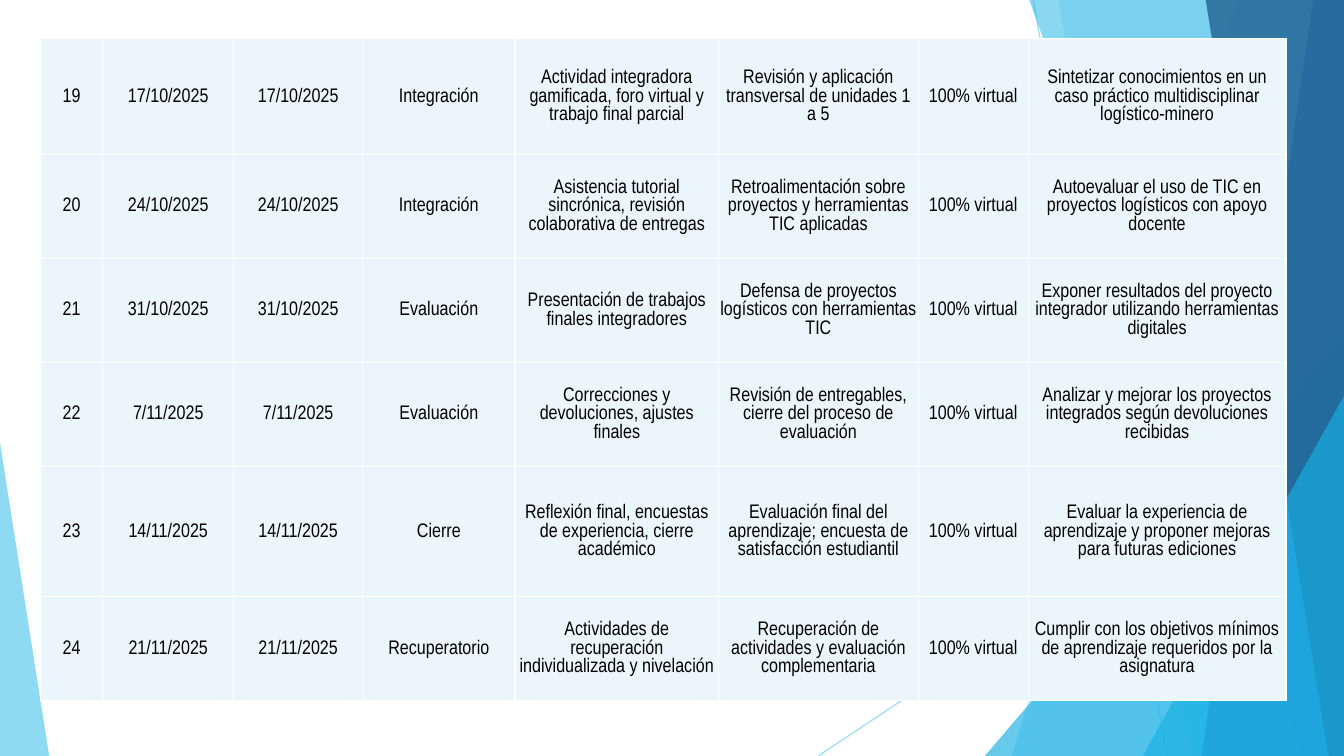
from lxml import etree
from pptx import Presentation
from pptx.dml.color import RGBColor
from pptx.enum.shapes import MSO_CONNECTOR, MSO_SHAPE
from pptx.enum.text import MSO_ANCHOR, PP_ALIGN
from pptx.oxml.ns import qn
from pptx.util import Cm, Pt

LINE = MSO_CONNECTOR.STRAIGHT
TRIANGLE = MSO_SHAPE.ISOSCELES_TRIANGLE
CENTER = PP_ALIGN.CENTER
MIDDLE = MSO_ANCHOR.MIDDLE

WIDTH, HEIGHT = 33.87, 19.05
COLORS = {
    "sky": "5FCBEF",
    "cyan": "17B0E4",
    "blue": "2E83C3",
    "navy": "226292",
    "cell": "EAF6FC",
    "white": "FFFFFF",
    "black": "000000",
}
LINES = [(26.04, 0, 29.41, HEIGHT), (WIDTH, 10.24, 20.62, HEIGHT)]
BACK = [(31.19, 25.5, "sky", 36), (26.67, 30.05, "sky", 20)]
FRONT = [
    (25.93, 32.79, "cyan", 50),
    (33.1, 30.28, "blue", 70),
    (30.38, 33.48, "navy", 80),
]
COLS = [1.57, 3.3, 3.25, 3.84, 5.13, 5.03, 2.77, 6.5]
ROWS = [2.92, 2.62, 2.62, 2.62, 3.28, 2.62]
FIRST = 19
MODE = "100% virtual"
WEEKS = [
    ("17/10/2025", "Integración",
     "Actividad integradora gamificada, foro virtual y trabajo final parcial",
     "Revisión y aplicación transversal de unidades 1 a 5",
     "Sintetizar conocimientos en un caso práctico multidisciplinar logístico-minero"),
    ("24/10/2025", "Integración",
     "Asistencia tutorial sincrónica, revisión colaborativa de entregas",
     "Retroalimentación sobre proyectos y herramientas TIC aplicadas",
     "Autoevaluar el uso de TIC en proyectos logísticos con apoyo docente"),
    ("31/10/2025", "Evaluación",
     "Presentación de trabajos finales integradores",
     "Defensa de proyectos logísticos con herramientas TIC",
     "Exponer resultados del proyecto integrador utilizando herramientas digitales"),
    ("7/11/2025", "Evaluación",
     "Correcciones y devoluciones, ajustes finales",
     "Revisión de entregables, cierre del proceso de evaluación",
     "Analizar y mejorar los proyectos integrados según devoluciones recibidas"),
    ("14/11/2025", "Cierre",
     "Reflexión final, encuestas de experiencia, cierre académico",
     "Evaluación final del aprendizaje; encuesta de satisfacción estudiantil",
     "Evaluar la experiencia de aprendizaje y proponer mejoras para futuras ediciones"),
    ("21/11/2025", "Recuperatorio",
     "Actividades de recuperación individualizada y nivelación",
     "Recuperación de actividades y evaluación complementaria",
     "Cumplir con los objetivos mínimos de aprendizaje requeridos por la asignatura"),
]


def paint(fill, color, alpha=100):
    """Fill with a solid colour at the given opacity in percent."""
    fill.solid()
    fill.fore_color.rgb = RGBColor.from_string(COLORS[color])
    if alpha < 100:
        solid = fill._xPr.find(qn("a:solidFill"))
        etree.SubElement(solid[0], qn("a:alpha"), val=str(alpha * 1000))


def finish(shape, color, alpha):
    """Give a shape its fill and remove its outline and shadow."""
    shape.shadow.inherit = False
    shape.line.fill.background()
    paint(shape.fill, color, alpha)


def add_line(slide, x1, y1, x2, y2):
    """Draw a thin pale line."""
    line = slide.shapes.add_connector(LINE, Cm(x1), Cm(y1), Cm(x2), Cm(y2))
    line.line.width = Pt(0.75)
    paint(line.line.fill, "sky", 70)
    etree.SubElement(line._element.spPr, qn("a:effectLst"))


def add_wedge(slide, top, base, color, alpha):
    """Draw a band from a slanted left edge to the right side of the slide."""
    pen = slide.shapes.build_freeform(Cm(top), Cm(-0.03))
    points = [(WIDTH, -0.03), (WIDTH, HEIGHT), (base, HEIGHT)]
    pen.add_line_segments([(Cm(x), Cm(y)) for x, y in points], close=True)
    finish(pen.convert_to_shape(), color, alpha)


def add_peak(slide, left, top, width, tip, color, alpha):
    """Draw a right triangle standing on the bottom of the slide."""
    peak = slide.shapes.add_shape(
        TRIANGLE, Cm(left), Cm(top), Cm(width), Cm(HEIGHT - top))
    peak.adjustments[0] = tip
    finish(peak, color, alpha)


def write(frame, text, *, size=14, font="Arial Narrow", color="black", align=CENTER):
    """Write formatted text into a text frame."""
    para = frame.paragraphs[0]
    para.alignment = align
    run = para.add_run()
    run.text = text
    run.font.size = Pt(size)
    run.font.name = font
    run.font.color.rgb = RGBColor.from_string(COLORS[color])


def add_edges(cell):
    """Put a white border on each side of a cell."""
    props = cell._tc.get_or_add_tcPr()
    for side in ("lnL", "lnR", "lnT", "lnB"):
        edge = etree.SubElement(props, qn("a:" + side), w=str(Pt(1)))
        solid = etree.SubElement(edge, qn("a:solidFill"))
        etree.SubElement(solid, qn("a:srgbClr"), val=COLORS["white"])


def fill_cell(cell, text):
    """Format a cell and write its text."""
    cell.margin_left = cell.margin_right = cell.margin_top = Cm(0.03)
    cell.margin_bottom = 0
    cell.vertical_anchor = MIDDLE
    add_edges(cell)
    paint(cell.fill, "cell")
    write(cell.text_frame, text)


def add_plan(slide):
    """Add the table of weekly classes."""
    table = slide.shapes.add_table(
        len(ROWS), len(COLS), Cm(1.02), Cm(0.97), Cm(sum(COLS)), Cm(sum(ROWS))).table
    for col, width in zip(table.columns, COLS):
        col.width = Cm(width)
    for row, height in zip(table.rows, ROWS):
        row.height = Cm(height)
    for i, (date, stage, task, topic, goal) in enumerate(WEEKS):
        texts = [str(FIRST + i), date, date, stage, task, topic, MODE, goal]
        for j, text in enumerate(texts):
            fill_cell(table.cell(i, j), text)


def main():
    """Build the slide and save it."""
    deck = Presentation()
    deck.slide_width, deck.slide_height = Cm(WIDTH), Cm(HEIGHT)
    slide = deck.slides.add_slide(deck.slide_layouts[6])
    for ends in LINES:
        add_line(slide, *ends)
    for band in BACK:
        add_wedge(slide, *band)
    add_peak(slide, 24.82, 8.46, 9.05, 1, "cyan", 66)
    for band in FRONT:
        add_wedge(slide, *band)
    add_peak(slide, 28.8, 9.98, 5.07, 1, "cyan", 66)
    add_peak(slide, 0, 11.15, 1.24, 0, "sky", 70)
    add_plan(slide)
    deck.save("out.pptx")


if __name__ == "__main__":
    main()
